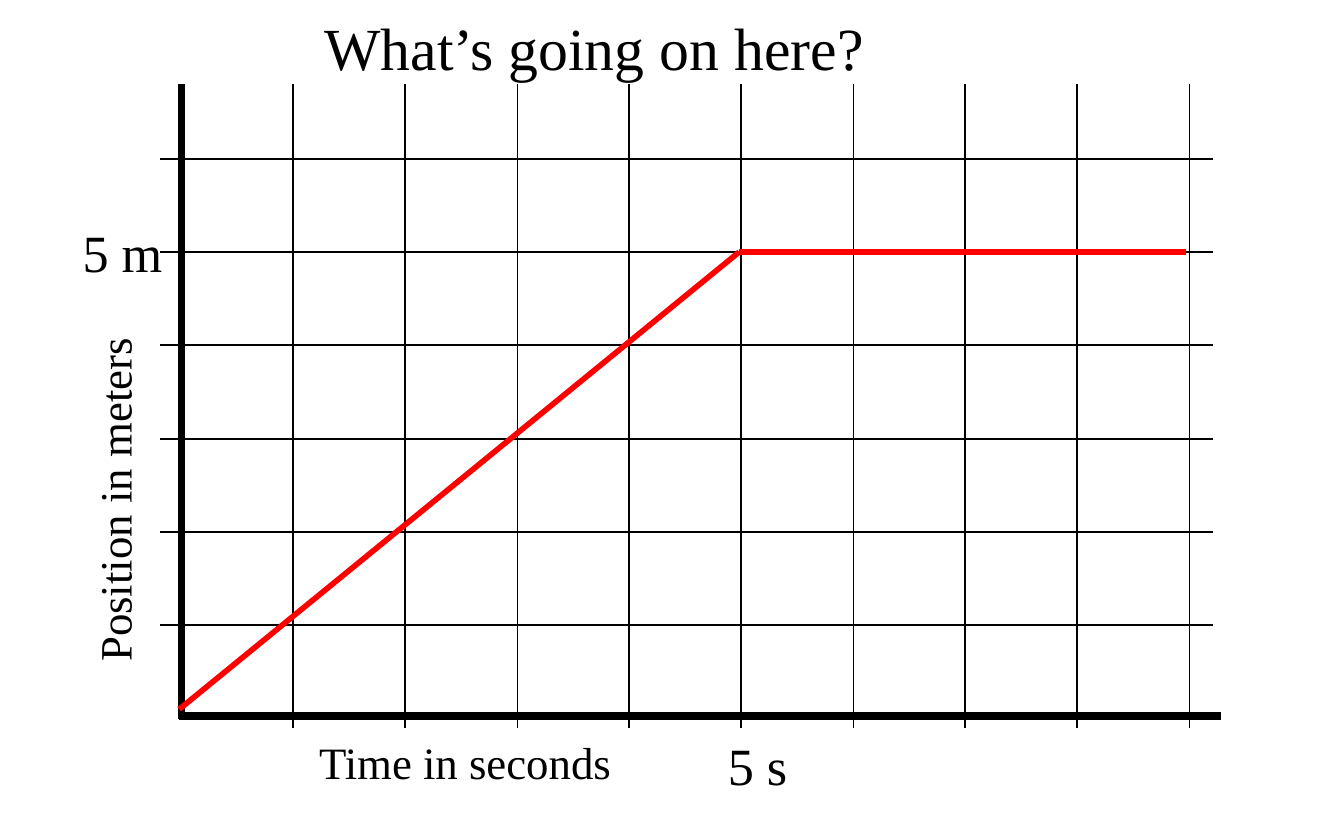
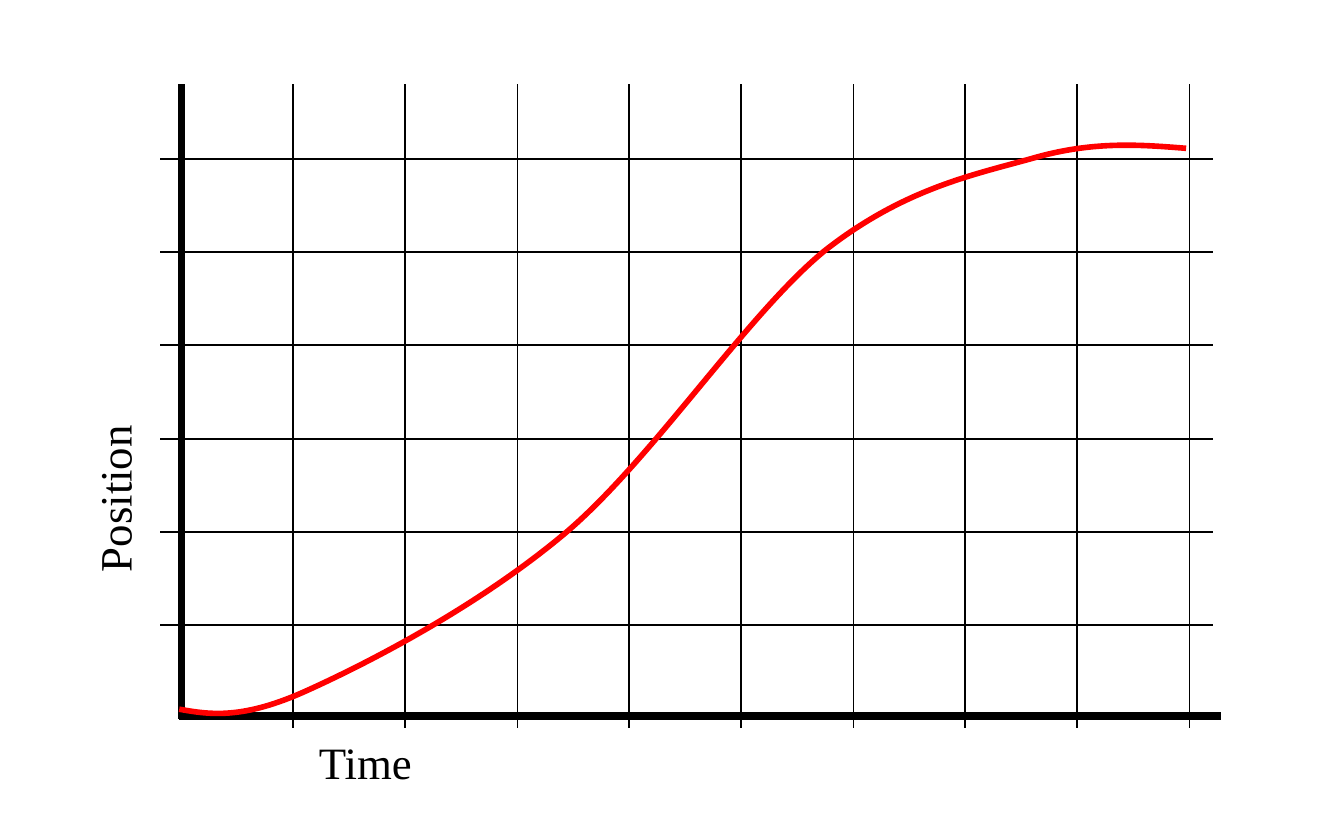
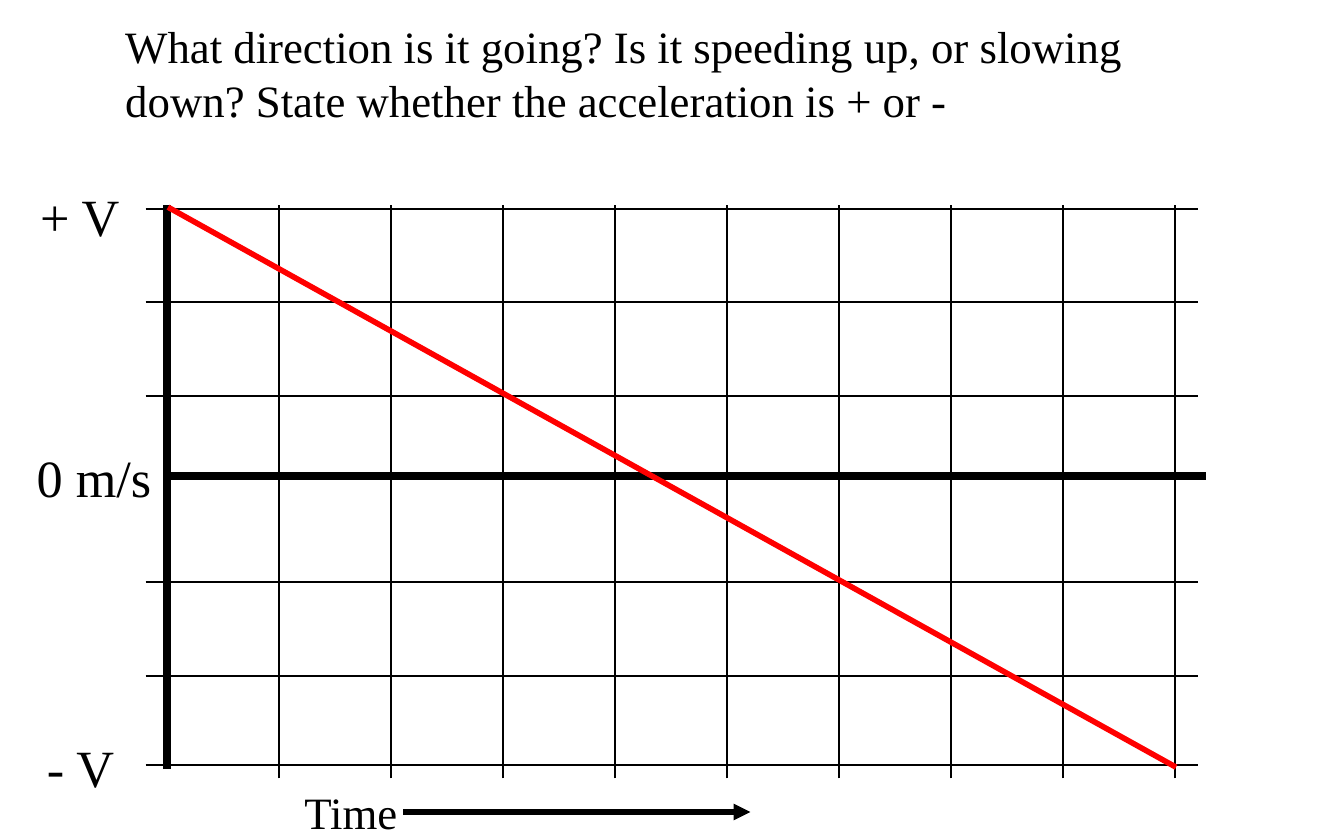
from dataclasses import dataclass
from typing import Any

from lxml import etree
from pptx import Presentation
from pptx import util as u
from pptx.dml.color import RGBColor
from pptx.enum import shapes as es, text as et
from pptx.oxml.ns import qn

BLACK = RGBColor(0x00, 0x00, 0x00)
RED = RGBColor(0xFF, 0x00, 0x00)
FONT = "Times New Roman"
WIDTH, HEIGHT = u.Inches(10), u.Inches(6.25)
COL, ROW = WIDTH / 12, HEIGHT / 9
COLUMNS = 9

S_CURVE = [
    (-0.02, 0.1), (0.26, 0.04), (0.55, -0.01), (1.12, 0.3),
    (1.71, 0.62), (2.67, 1.22), (3.44, 2), (4.21, 2.79),
    (5.05, 4.33), (5.74, 5.01), (6.44, 5.67), (7.05, 5.82),
    (7.59, 6), (8.13, 6.19), (8.55, 6.15), (8.97, 6.11),
]


@dataclass
class Plot:
    shapes: Any
    left: float
    top: float
    base: float

    def at(self, x, y):
        return round((self.left + x) * COL), round((self.base - y) * ROW)


def add_line(plot, start, end, color=BLACK, weight=1, arrow=False):
    line = plot.shapes.add_connector(
        es.MSO_CONNECTOR.STRAIGHT, *plot.at(*start), *plot.at(*end))
    line.line.color.rgb = color
    line.line.width = u.Pt(weight)
    if arrow:
        etree.SubElement(line.line._get_or_add_ln(), qn("a:tailEnd"), type="triangle")
    etree.SubElement(line._element.spPr, qn("a:effectLst"))


def add_label(plot, words, x, y, w, h, size=28, wrap=False):
    box = plot.shapes.add_textbox(*plot.at(x, y), round(w * COL), round(h * ROW))
    tf = box.text_frame
    tf.word_wrap = wrap
    tf.auto_size = et.MSO_AUTO_SIZE.SHAPE_TO_FIT_TEXT
    r = tf.paragraphs[0].add_run()
    r.text = words
    r.font.name = FONT
    r.font.size = u.Pt(size)
    r.font.color.rgb = BLACK
    return box


def add_grid(plot, levels, axis):
    height = plot.base - plot.top
    add_line(plot, (0, 0), (0, height), weight=4)
    add_line(plot, (-0.02, axis), (9.28, axis), weight=4)
    for x in range(1, COLUMNS + 1):
        add_line(plot, (x, -0.1), (x, height))
    for y in levels:
        add_line(plot, (-0.19, y), (9.21, y))


def add_time_label(plot, words, w):
    add_label(plot, words, 1.11, -0.1, w, 0.72, 24)


def add_position_label(plot, words, w):
    add_label(plot, words, -0.6 - w / 2, 2.73, w, 0.73, 24).rotation = 270


def add_curve(plot, points):
    pts = [plot.at(*point) for point in points]
    builder = plot.shapes.build_freeform(*pts[0])
    builder.add_line_segments(pts[1:], close=False)
    curve = builder.convert_to_shape()
    curve.shadow.inherit = False
    curve.fill.background()
    curve.line.color.rgb = RED
    curve.line.width = u.Pt(3)
    outline = next(curve._element.iter(qn("a:pathLst")))[0]
    segments = outline.findall(qn("a:lnTo"))
    for i in range(0, len(segments), 3):
        bezier = etree.SubElement(outline, qn("a:cubicBezTo"))
        for segment in segments[i:i + 3]:
            bezier.append(segment[0])
            outline.remove(segment)


def add_position_plot(s, time, time_w, position, position_w):
    plot = Plot(s.shapes.add_group_shape().shapes, 1.62, 0.9, 7.7)
    add_grid(plot, range(1, 7), 0.03)
    add_time_label(plot, time, time_w)
    add_position_label(plot, position, position_w)
    return plot


def walk_then_stop_slide(s):
    plot = add_position_plot(s, "Time in seconds", 2.87, "Position in meters", 3.16)
    add_label(plot, "5 s", 4.76, -0.09, 0.78, 0.82)
    add_label(plot, "5 m", -1, 5.41, 0.96, 0.82)
    plot.shapes = s.shapes
    add_label(plot, "What’s going on here?", 1.16, 7.66, 5.1, 0.92, 32)
    add_line(plot, (-0.02, 0.1), (4.98, 5), RED, 3)
    add_line(plot, (4.98, 5), (8.97, 5), RED, 3)


def curve_slide(s):
    plot = add_position_plot(s, "Time", 1.08, "Position", 1.56)
    plot.shapes = s.shapes
    add_curve(plot, S_CURVE)


def velocity_slide(s):
    plot = Plot(s.shapes, 1.49, 2.2, 8.24)
    add_grid(plot, (0.04, 1, 2, 4, 5, 6), 3.14)
    add_time_label(plot, "Time", 1.08)
    add_label(plot, "+ V", -1.25, 6.34, 0.96, 0.82)
    add_label(plot, "0 m/s", -1.28, 3.54, 1.27, 0.82)
    add_label(plot, "- V", -1.19, 0.43, 0.85, 0.82)
    add_line(plot, (2.11, -0.46), (5.21, -0.46), weight=3, arrow=True)
    add_line(plot, (0.01, 6.02), (9.01, 0.02), RED, 3)
    add_label(plot, "What direction is it going? Is it speeding up, or slowing down? "
              "State whether the acceleration is + or -",
              -0.49, 8.11, 9.8, 1.31, 24, wrap=True)


def main():
    prs = Presentation()
    prs.slide_width, prs.slide_height = WIDTH, HEIGHT
    for build in (walk_then_stop_slide, curve_slide, velocity_slide):
        build(prs.slides.add_slide(prs.slide_layouts[6]))
    prs.save("out.pptx")


if __name__ == "__main__":
    main()
